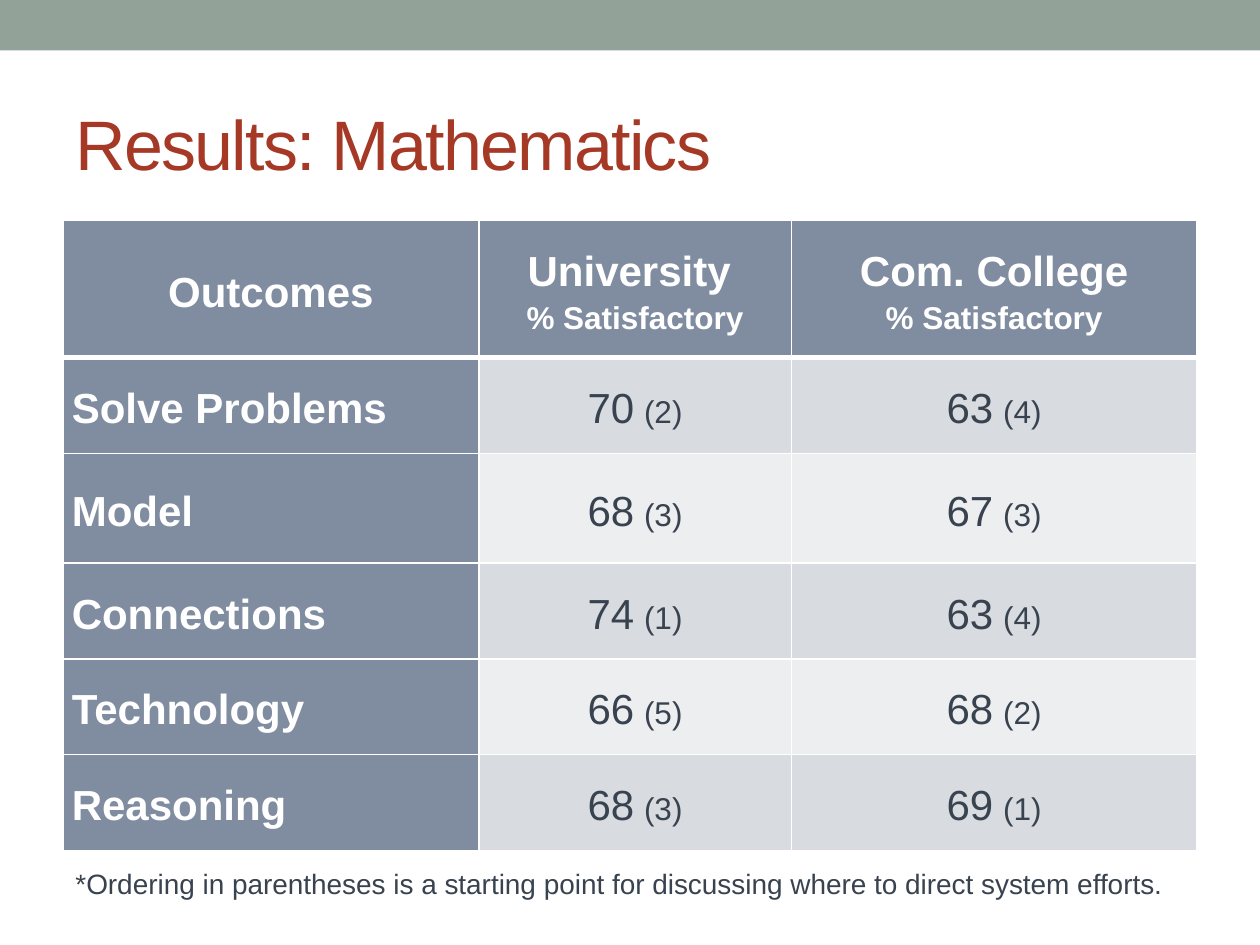
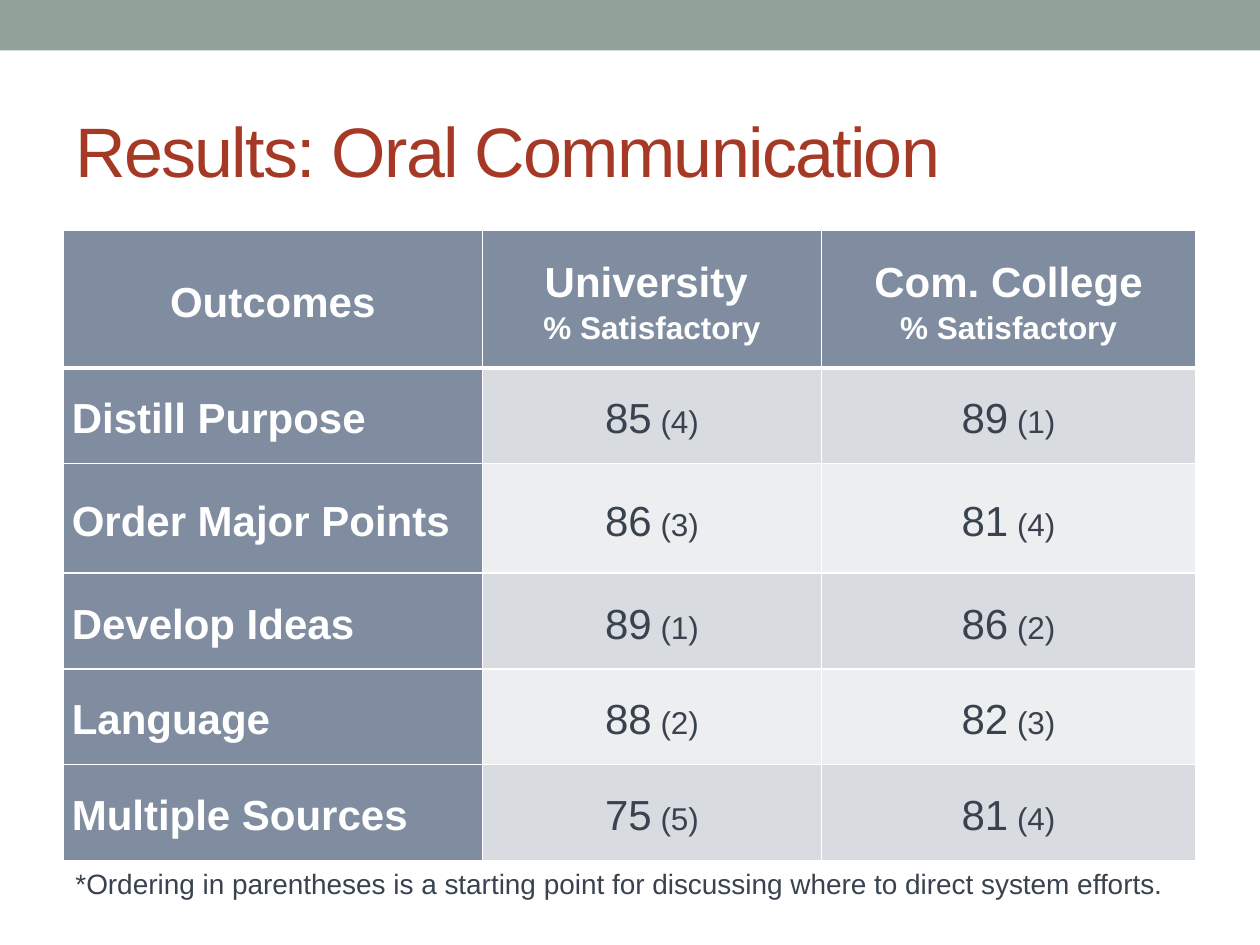
from lxml.etree import SubElement
from pptx import Presentation
from pptx.dml.color import RGBColor
from pptx.enum.shapes import MSO_SHAPE
from pptx.enum.text import MSO_ANCHOR, MSO_AUTO_SIZE, PP_ALIGN
from pptx.oxml.ns import qn
from pptx.util import Inches, Pt

FONT = "Arial"
WHITE = "FFFFFF"
SAGE = "93A299"
RUST = "A53926"
SLATE = "808DA0"
INK = "394350"
STRIPES = ("D8DBDF", "EDEEF0")

LEFT = 0.5
WIDTH = 9
ROW_HEIGHTS = (1.09, 0.76, 0.87, 0.76, 0.76, 0.76)
HEADINGS = (
    [("Outcomes", 24)],
    [("University ", 24), ("% Satisfactory", 18)],
    [("Com. College", 24), ("% Satisfactory", 18)],
)
FOOTNOTE = (
    "*Ordering in parentheses is a starting point for discussing "
    "where to direct system efforts."
)

RESULTS = (
    {
        "title": "Results: Mathematics",
        "title_top": 0.67,
        "title_height": 0.92,
        "table_top": 1.75,
        "columns": (3.3, 2.48, 3.22),
        "gap_size": 20,
        "outcomes": (
            ("Solve Problems", (70, 2), (63, 4)),
            ("Model", (68, 3), (67, 3)),
            ("Connections", (74, 1), (63, 4)),
            ("Technology", (66, 5), (68, 2)),
            ("Reasoning", (68, 3), (69, 1)),
        ),
    },
    {
        "title": "Results: Oral Communication",
        "title_top": 0.75,
        "title_height": 0.87,
        "table_top": 1.83,
        "columns": (3.33, 2.69, 2.97),
        "gap_size": 18,
        "outcomes": (
            ("Distill Purpose", (85, 4), (89, 1)),
            ("Order Major Points", (86, 3), (81, 4)),
            ("Develop Ideas", (89, 1), (86, 2)),
            ("Language", (88, 2), (82, 3)),
            ("Multiple Sources", (75, 5), (81, 4)),
        ),
    },
)


def color(hex_code):
    return RGBColor.from_string(hex_code)


def add_run(paragraph, text, size, hex_code, bold=False):
    run = paragraph.add_run()
    run.text = text
    run.font.name = FONT
    run.font.size = Pt(size)
    run.font.bold = bold
    run.font.color.rgb = color(hex_code)
    return run


def add_band(slide):
    band = slide.shapes.add_shape(
        MSO_SHAPE.RECTANGLE, 0, 0, Inches(10), Inches(0.4)
    )
    band.shadow.inherit = False
    band.fill.solid()
    band.fill.fore_color.rgb = color(SAGE)
    band.line.fill.background()


def set_title(slide, text, top, height):
    title = slide.shapes.title
    title.left, title.top = Inches(LEFT), Inches(top)
    title.width, title.height = Inches(WIDTH), Inches(height)
    frame = title.text_frame
    frame.auto_size = MSO_AUTO_SIZE.NONE
    frame.vertical_anchor = MSO_ANCHOR.MIDDLE
    heading = frame.paragraphs[0]
    heading.alignment = PP_ALIGN.LEFT
    run = add_run(heading, text, 40, RUST)
    run.font._element.set("spc", "-100")


def set_borders(cell, top, bottom):
    properties = cell._tc.get_or_add_tcPr()
    for side, width in (("L", 1), ("R", 1), ("T", top), ("B", bottom)):
        edge = SubElement(properties, qn(f"a:ln{side}"), w=str(Pt(width)))
        paint = SubElement(edge, qn("a:solidFill"))
        SubElement(paint, qn("a:srgbClr"), val=WHITE)


def fill_cell(cell, row, lines, fill, ink, bold, alignment):
    cell.margin_left = cell.margin_right = Inches(0.07)
    cell.margin_top = cell.margin_bottom = 0
    cell.vertical_anchor = MSO_ANCHOR.MIDDLE
    set_borders(cell, 3 if row == 1 else 1, 3 if row == 0 else 1)
    cell.fill.solid()
    cell.fill.fore_color.rgb = color(fill)
    frame = cell.text_frame
    for index, runs in enumerate(lines):
        line = frame.add_paragraph() if index else frame.paragraphs[0]
        line.alignment = alignment
        line.line_spacing = 1.15
        for text, size in runs:
            add_run(line, text, size, ink, bold)


def add_results_table(slide, top, columns, outcomes, gap_size):
    table = slide.shapes.add_table(
        len(ROW_HEIGHTS), len(columns),
        Inches(LEFT), Inches(top), Inches(WIDTH), Inches(sum(ROW_HEIGHTS)),
    ).table
    for column, width in zip(table.columns, columns):
        column.width = Inches(width)
    for row, height in zip(table.rows, ROW_HEIGHTS):
        row.height = Inches(height)

    for column, heading in enumerate(HEADINGS):
        lines = [[run] for run in heading]
        fill_cell(table.cell(0, column), 0, lines,
                  SLATE, WHITE, True, PP_ALIGN.CENTER)

    for row, (outcome, *scores) in enumerate(outcomes, 1):
        fill_cell(table.cell(row, 0), row, [[(outcome, 24)]],
                  SLATE, WHITE, True, PP_ALIGN.LEFT)
        stripe = STRIPES[(row - 1) % 2]
        for column, (percent, rank) in enumerate(scores, 1):
            score = [(str(percent), 24), (" ", gap_size), (f"({rank})", 18)]
            fill_cell(table.cell(row, column), row, [score],
                      stripe, INK, False, PP_ALIGN.CENTER)


def add_footnote(slide):
    footnote = slide.shapes.add_textbox(
        Inches(LEFT), Inches(6.83), Inches(9.08), Inches(0.37)
    )
    frame = footnote.text_frame
    frame.word_wrap = True
    frame.auto_size = MSO_AUTO_SIZE.SHAPE_TO_FIT_TEXT
    add_run(frame.paragraphs[0], FOOTNOTE, 16, INK)


def main():
    deck = Presentation()
    deck.slide_width, deck.slide_height = Inches(10), Inches(7.5)
    title_only = deck.slide_layouts.get_by_name("Title Only")
    for result in RESULTS:
        slide = deck.slides.add_slide(title_only)
        add_band(slide)
        set_title(slide, result["title"], result["title_top"],
                  result["title_height"])
        add_results_table(slide, result["table_top"], result["columns"],
                          result["outcomes"], result["gap_size"])
        add_footnote(slide)
    deck.save("out.pptx")


if __name__ == "__main__":
    main()
